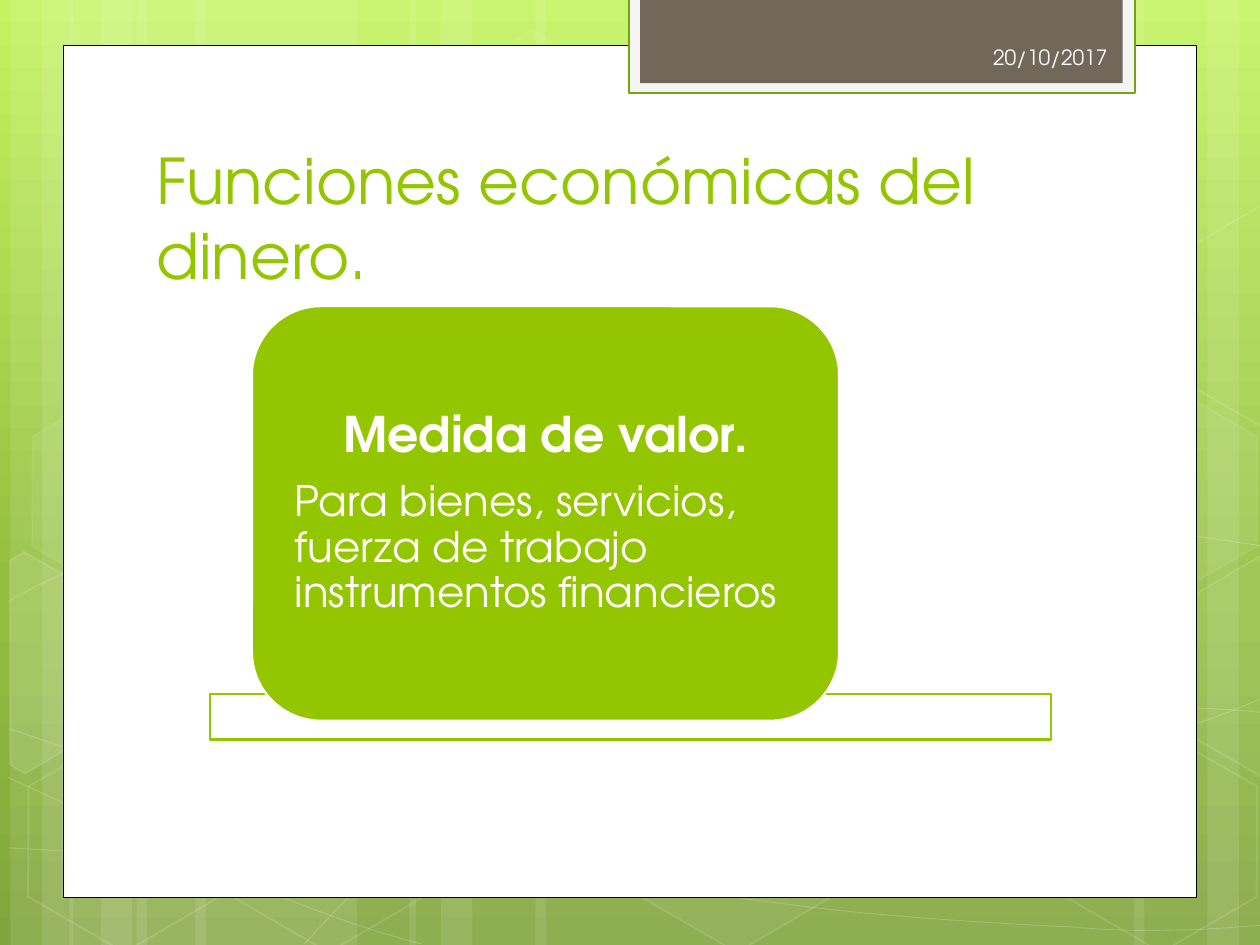
from typing import NamedTuple, Optional

from lxml.etree import SubElement
from pptx import Presentation
from pptx.dml.color import RGBColor
from pptx.enum.shapes import MSO_SHAPE as Shp
from pptx.enum.text import MSO_ANCHOR as Anchor, MSO_AUTO_SIZE as Auto, PP_ALIGN as Align
from pptx.oxml.ns import qn
from pptx.util import Inches, Pt

FONT, GREEN, WHITE = "TeX Gyre Adventor", "94C600", "FFFFFF"
TWELFTH = 1 / 12
HEX_LEFT, HEX_BOTTOM, HEX_COL, HEX_ROW = 0.11, 5.92, 0.81, 1.39


class Box(NamedTuple):
    """Left, top, width and height in inches."""
    x: float
    y: float
    w: float
    h: float


class Style(NamedTuple):
    """Fill and line, with opacities in percent."""
    fill: Optional[str] = None
    alpha: int = 100
    line: Optional[str] = None
    width: float = 1
    line_alpha: int = 100


class Hexagon(NamedTuple):
    """Lattice cell, fill opacity and outline opacity."""
    col: float
    row: float
    alpha: int
    line_alpha: int


class Crop(NamedTuple):
    """Outline of a hexagon cut by the slide edge, with its fill opacity."""
    points: list
    alpha: int


BANDS = [(13, 21), (1, 6), (4, 10), (18.6, 21), (6.6, 6), (9.6, 10),
         (88, 21), (115, 6), (108, 10), (51, 37), (39, 6), (42, 10)]
CURVES = [
    [(0.07, 6.73), (0.61, 6.76), (1.15, 6.79), (1.9, 6.78), (2.65, 6.77), (3.58, 6.75), (4.58, 6.65),
     (5.58, 6.55), (7, 6.36), (7.92, 6.17), (8.83, 5.98), (9.77, 5.68), (10.07, 5.51)],
    [(0.07, 4.77), (0.36, 4.61), (0.65, 4.46), (1.21, 4.31), (1.78, 4.16), (2.59, 3.94), (3.47, 3.87),
     (4.36, 3.8), (5.44, 3.79), (6.54, 3.87), (7.64, 3.95), (9.47, 4.26), (10.07, 4.34)],
    [(0.06, 6.17), (1.27, 6.72), (2.47, 7.27), (3.34, 7.49)],
    [(0.07, 5.78), (0.38, 5.89), (0.7, 6), (1.28, 6.16), (1.86, 6.31), (2.73, 6.56), (3.57, 6.73),
     (4.4, 6.9), (5.45, 7.08), (6.28, 7.18), (7.11, 7.29), (8, 7.33), (8.53, 7.36),
     (9.05, 7.4), (9.19, 7.38), (9.45, 7.38), (9.71, 7.37), (9.89, 7.35), (10.07, 7.34)],
    [(2.42, 7.49), (2.6, 7.29), (2.78, 7.09), (3.02, 6.91), (3.26, 6.73), (3.6, 6.53), (3.88, 6.39),
     (4.16, 6.25), (4.33, 6.19), (4.7, 6.09), (5.06, 5.99), (5.73, 5.85), (6.08, 5.78),
     (6.44, 5.71), (6.49, 5.71), (6.8, 5.69), (7.11, 5.66), (7.6, 5.63), (7.94, 5.62),
     (8.29, 5.61), (8.86, 5.62), (8.86, 5.62), (9.08, 5.62), (9.31, 5.62), (9.53, 5.62),
     (9.71, 5.63), (9.88, 5.64), (9.97, 5.65), (10.06, 5.66), (10.03, 5.65), (10.06, 5.66)],
]
HEXAGONS = [Hexagon(4, 4, 4, 8), Hexagon(6, 0, 6, 12), Hexagon(0, 0, 0, 12), Hexagon(0.04, 2, 7, 8),
            Hexagon(2, 0, 0, 12), Hexagon(9.16, 1, 10, 12), Hexagon(10.16, 0, 0, 12),
            Hexagon(10.16, 2, 7, 8)]
CROPS = [
    Crop([(0.08, 4.45), (0.19, 4.38), (0.96, 4.82), (0.95, 5.7), (0.2, 6.14), (0.08, 6.07)], 10),
    Crop([(9.26, 4.85), (10.01, 4.41), (10.09, 4.46), (10.09, 6.13), (10.02, 6.17), (9.26, 5.73)], 4),
    Crop([(9.26, 2.07), (10.01, 1.63), (10.1, 1.68), (10.09, 3.35), (10.02, 3.39), (9.26, 2.95)], 0),
]
PANELS = [
    (Box(0.5, 0.36, 9, 6.76), Style(WHITE, line="000000", width=0.5)),
    (Box(4.99, -0.02, 4.02, 0.76), Style("F5F5F5", line="74A510", width=1.25)),
    (Box(5.08, -0.02, 3.83, 0.68), Style("71685A")),
]


def color(value: str) -> RGBColor:
    """Turn a hex string into a colour."""
    return RGBColor.from_string(value)


def paint(fill, owner, value: Optional[str], alpha: int) -> None:
    """Give a fill a colour and an opacity; owner holds its solidFill."""
    if not value or not alpha:
        fill.background()
        return
    fill.solid()
    fill.fore_color.rgb = color(value)
    if alpha < 100:
        clr = owner.find(qn("a:solidFill")).find(qn("a:srgbClr"))
        SubElement(clr, qn("a:alpha")).set("val", str(alpha * 1000))


def apply_style(sp, style: Style):
    """Set shadow, fill and line of a shape."""
    sp.shadow.inherit = False
    pr = sp.element.spPr
    paint(sp.fill, pr, style.fill, style.alpha)
    sp.line.width = Pt(style.width)
    paint(sp.line.fill, pr.find(qn("a:ln")), style.line, style.line_alpha)
    return sp


def add_box(slide, kind: Shp, box: Box, style: Style):
    """Add a preset shape."""
    return apply_style(slide.shapes.add_shape(kind, *map(Inches, box)), style)


def add_outline(slide, points: list, style: Style, close: bool):
    """Add a freeform through points given in inches."""
    pts = [(Inches(x), Inches(y)) for x, y in points]
    builder = slide.shapes.build_freeform(*pts[0], scale=1.0)
    builder.add_line_segments(pts[1:], close=close)
    return apply_style(builder.convert_to_shape(), style)


def add_curve(slide, knots: list, style: Style) -> None:
    """Add an open freeform of cubic segments; every third knot is on the curve."""
    sp = add_outline(slide, knots[::3], style, False)
    for i, seg in enumerate(list(sp.element.iter(qn("a:lnTo")))):
        seg.tag = qn("a:cubicBezTo")
        seg.clear()
        for x, y in knots[3 * i + 1:3 * i + 4]:
            SubElement(seg, qn("a:pt"), x=str(Inches(x) - sp.left), y=str(Inches(y) - sp.top))


def write(p, text: str, size: float, value: str, bold: bool = False, **layout) -> None:
    """Write one formatted run and set paragraph attributes."""
    r = p.add_run()
    r.text = text
    r.font.color.rgb = color(value)
    for name, val in {"name": FONT, "size": Pt(size), "bold": bold}.items():
        setattr(r.font, name, val)
    for name, val in layout.items():
        setattr(p, name, val)


def set_frame(tf, **values) -> None:
    """Set text frame attributes."""
    for name, val in {"word_wrap": True, "auto_size": Auto.NONE, **values}.items():
        setattr(tf, name, val)


def add_text(slide, box: Box, **values):
    """Add a vertically centred text box and return its frame."""
    tf = slide.shapes.add_textbox(*map(Inches, box)).text_frame
    set_frame(tf, vertical_anchor=Anchor.MIDDLE, **values)
    return tf


def draw_background(slide) -> None:
    """Draw the gradient, bands, curves and hexagons."""
    fill = slide.background.fill
    fill.gradient()
    fill.gradient_angle = 270
    stops = next(slide.element.iter(qn("a:gsLst")))
    stops.clear()
    for pos, value in ((0, "C3F35F"), (62, "93BF3F"), (100, "81A53E")):
        stop = SubElement(stops, qn("a:gs"), pos=str(pos * 1000))
        SubElement(stop, qn("a:srgbClr"), val=value)
    for start, span in BANDS:
        add_box(slide, Shp.RECTANGLE, Box(start * TWELFTH, 0, span * TWELFTH, 7.5), Style(WHITE, 10))
    for knots in CURVES:
        add_curve(slide, knots, Style(line=WHITE, width=0.5, line_alpha=20))
    for h in HEXAGONS:
        box = Box(HEX_LEFT + h.col * HEX_COL, HEX_BOTTOM - h.row * HEX_ROW, 1.75, 1.52)
        sp = add_box(slide, Shp.HEXAGON, box, Style(WHITE, h.alpha, WHITE, 1, h.line_alpha))
        sp.adjustments[0] = 0.285
        sp.rotation = 30
    for crop in CROPS:
        add_outline(slide, crop.points, Style(WHITE, crop.alpha, WHITE, 1, 12), True)


def draw_content(slide) -> None:
    """Draw the panels, title, date and value card."""
    for box, style in PANELS:
        add_box(slide, Shp.RECTANGLE, box, style)
    title = slide.shapes.title
    slide.shapes.element.append(title.element)
    for name, val in zip(("left", "top", "width", "height"), (1.14, 1.12, 7.68, 1.25)):
        setattr(title, name, Inches(val))
    set_frame(title.text_frame, vertical_anchor=Anchor.BOTTOM)
    write(title.text_frame.paragraphs[0], "Funciones económicas del dinero.", 36, GREEN,
          alignment=Align.LEFT)
    date = add_text(slide, Box(6.56, 0.25, 2.33, 0.4))
    write(date.paragraphs[0], "20/10/2017", 12, "FEFEFE", alignment=Align.RIGHT)
    add_box(slide, Shp.RECTANGLE, Box(1.67, 5.51, 6.67, 0.36), Style(WHITE, 90, GREEN, 1.25))
    add_box(slide, Shp.ROUNDED_RECTANGLE, Box(2, 2.43, 4.66, 3.29),
            Style(GREEN, line=WHITE, width=1.25))
    tf = add_text(slide, Box(2.16, 2.59, 4.34, 2.97), margin_left=Inches(0.18),
                  margin_right=Inches(0.18), margin_top=0, margin_bottom=0)
    write(tf.paragraphs[0], "Medida de valor.", 28, WHITE, True,
          alignment=Align.CENTER, line_spacing=0.9, space_after=Pt(10))
    write(tf.add_paragraph(), "Para bienes, servicios, fuerza de trabajo instrumentos financieros",
          24, WHITE, alignment=Align.LEFT, line_spacing=0.9, space_after=Pt(8))


def main() -> None:
    """Build and save the slide."""
    prs = Presentation()
    prs.slide_width, prs.slide_height = Inches(10), Inches(7.5)
    slide = prs.slides.add_slide(prs.slide_layouts[5])
    draw_background(slide)
    draw_content(slide)
    prs.save("out.pptx")


if __name__ == "__main__":
    main()
